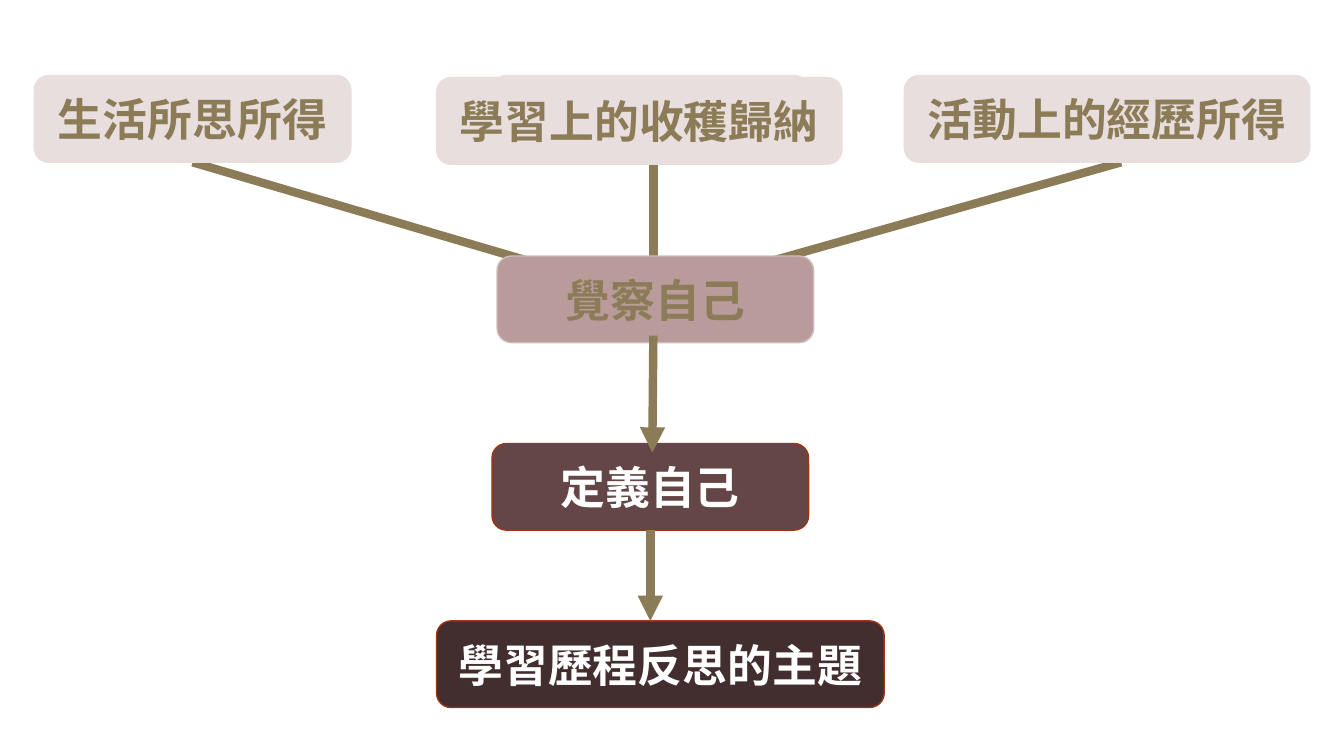
from lxml.etree import SubElement
from pptx import Presentation
from pptx.dml.color import RGBColor
from pptx.enum.shapes import MSO_CONNECTOR, MSO_SHAPE
from pptx.enum.text import MSO_ANCHOR, PP_ALIGN
from pptx.oxml.ns import qn
from pptx.util import Inches, Pt

FONT = "Noto Sans CJK TC"
OLIVE = RGBColor(0x8B, 0x7B, 0x57)
PALE = RGBColor(0xE8, 0xDE, 0xDE)
ROSE = RGBColor(0xB9, 0x9B, 0x9B)
ROSE_EDGE = RGBColor(0xD0, 0xBC, 0xBC)
BROWN = RGBColor(0x64, 0x46, 0x46)
DARK = RGBColor(0x42, 0x2E, 0x2E)
RUST = RGBColor(0x9C, 0x35, 0x11)
WHITE = RGBColor(0xFF, 0xFF, 0xFF)
BOX_HEIGHT = 0.86
NARROW, MEDIUM, WIDE = 3.14, 4.02, 4.44

prs = Presentation()
prs.slide_width, prs.slide_height = Inches(13.33), Inches(7.5)
slide = prs.slides.add_slide(prs.slide_layouts[6])


def add_box(text, left, top, width, fill, edge, ink):
    box = slide.shapes.add_shape(
        MSO_SHAPE.ROUNDED_RECTANGLE,
        Inches(left), Inches(top), Inches(width), Inches(BOX_HEIGHT))
    box.shadow.inherit = False
    box.fill.solid()
    box.fill.fore_color.rgb = fill
    box.line.color.rgb = edge
    box.line.width = Pt(1)
    if text:
        box.text_frame.text = text
        box.text_frame.vertical_anchor = MSO_ANCHOR.MIDDLE
        paragraph = box.text_frame.paragraphs[0]
        paragraph.alignment = PP_ALIGN.CENTER
        font = paragraph.runs[0].font
        font.name, font.size, font.bold = FONT, Pt(32), True
        font.color.rgb = ink
        SubElement(paragraph.runs[0]._r.get_or_add_rPr(), qn("a:ea"), typeface=FONT)
    return box


def add_arrow(x1, y1, x2, y2):
    arrow = slide.shapes.add_connector(
        MSO_CONNECTOR.STRAIGHT, Inches(x1), Inches(y1), Inches(x2), Inches(y2))
    arrow.line.color.rgb = OLIVE
    arrow.line.width = Pt(6)
    SubElement(arrow.line._get_or_add_ln(), qn("a:tailEnd"), type="triangle")
    SubElement(arrow._element.spPr, qn("a:effectLst"))
    return arrow


# Arrows from the three sources, behind the boxes
add_arrow(6.48, 1.12, 6.48, 3.07)
life_arrow = add_arrow(1.91, 1.61, 6.47, 2.95)
add_arrow(11.12, 1.61, 6.87, 2.81)

# Boxes, from the sources down to the theme
boxes = {}
for text, left, top, width, fill, edge, ink in [
    ("", 4.88, 0.75, NARROW, PALE, PALE, OLIVE),
    ("生活所思所得", 0.34, 0.75, NARROW, PALE, PALE, OLIVE),
    ("學習上的收穫歸納", 4.33, 0.77, MEDIUM, PALE, PALE, OLIVE),
    ("活動上的經歷所得", 8.97, 0.75, MEDIUM, PALE, PALE, OLIVE),
    ("覺察自己", 4.93, 2.54, NARROW, ROSE, ROSE_EDGE, OLIVE),
    ("定義自己", 4.88, 4.4, NARROW, BROWN, RUST, WHITE),
    ("學習歷程反思的主題", 4.33, 6.16, WIDE, DARK, RUST, WHITE),
]:
    boxes[text] = add_box(text, left, top, width, fill, edge, ink)

# Arrows down the middle, in front of the boxes
add_arrow(6.48, 3.33, 6.47, 4.49)
theme_arrow = add_arrow(6.45, 5.26, 6.45, 6.16)

# Join the arrows that start at the middle of a bottom side
life_arrow.begin_connect(boxes["生活所思所得"], 2)
theme_arrow.begin_connect(boxes["定義自己"], 2)

prs.save("out.pptx")
